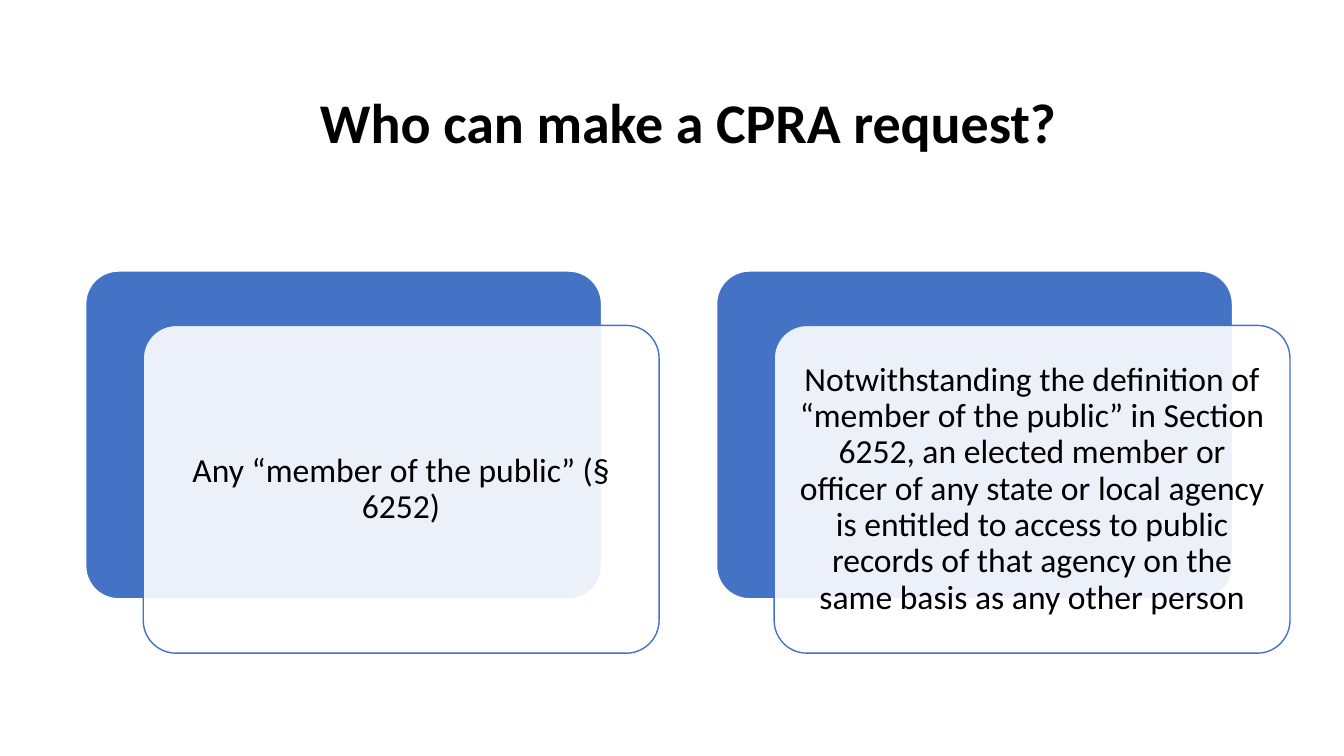
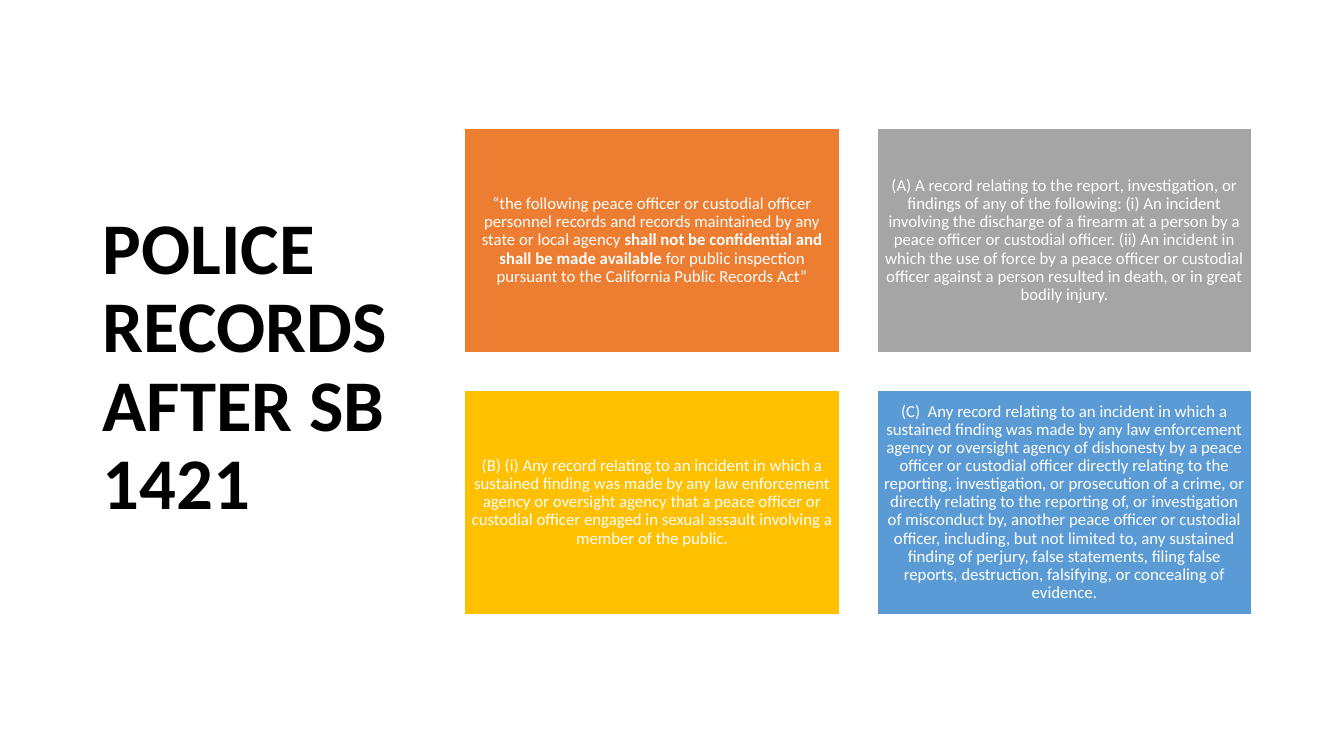
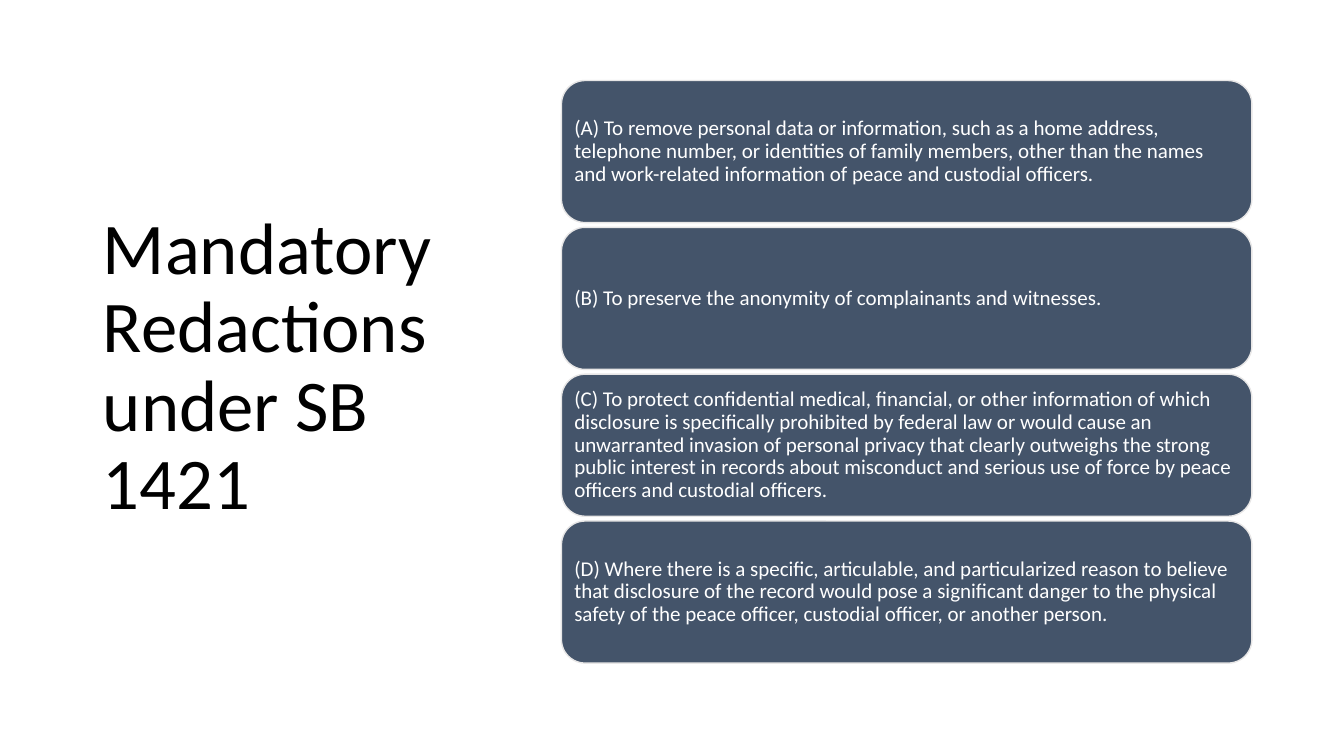
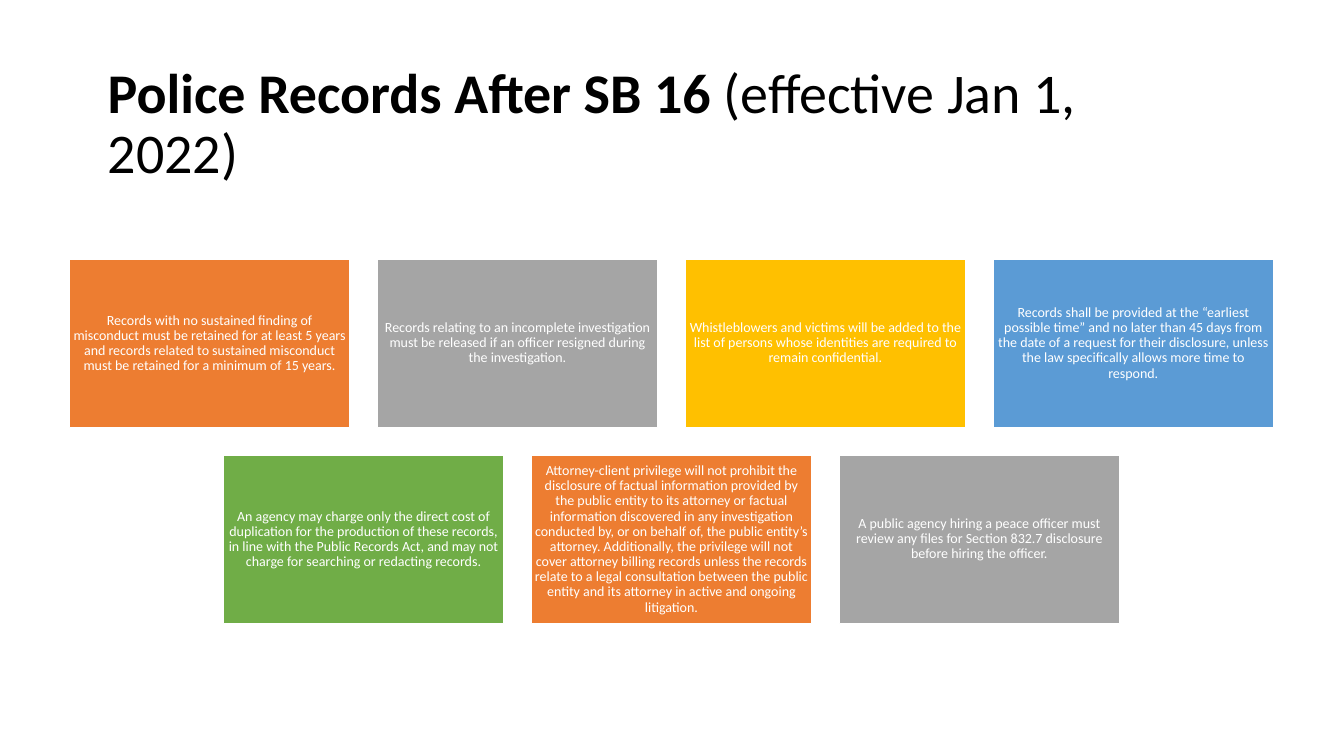
from dataclasses import dataclass

import lxml.etree
import pptx
import pptx.dml.color
import pptx.enum.shapes
import pptx.enum.text
import pptx.oxml.ns
import pptx.presentation
import pptx.shapes.autoshape
import pptx.slide
import pptx.text.text
import pptx.util

Cm = pptx.util.Cm
Align = pptx.enum.text.PP_ALIGN
Preset = pptx.enum.shapes.MSO_SHAPE

FONT = "Calibri"
LINE_SPACING = 0.9
TITLE_ONLY_LAYOUT = 5
COLORS = {
    "black": "000000",
    "white": "FFFFFF",
    "blue": "4472C4",
    "orange": "ED7D31",
    "gray": "A5A5A5",
    "gold": "FFC000",
    "sky": "5B9BD5",
    "green": "70AD47",
    "slate": "44546A",
    "silver": "E7E6E6",
}


@dataclass(frozen=True)
class Span:
    text: str
    bold: bool = False


@dataclass(frozen=True)
class Box:
    left: float
    top: float
    width: float
    height: float


@dataclass(frozen=True)
class TextStyle:
    size: int
    color: str = "white"
    align: Align = Align.CENTER


@dataclass(frozen=True)
class Card:
    fill: str
    spans: tuple[Span, ...] = ()


@dataclass(frozen=True)
class CardGrid:
    first: Box
    columns: int
    gap: float
    style: TextStyle
    margin: float
    line: str = "white"
    preset: Preset = Preset.RECTANGLE
    corner: float | None = None
    opacity: int = 100


WIDE_TITLE = Box(2.46, 0.97, 28.37, 4.37)
CENTERED_TITLE = Box(3.84, 0.97, 27, 4.37)
SIDE_TITLE = Box(2.34, 1.55, 9.37, 15.47)

REQUESTERS = (
    "Any “member of the public” (§ 6252)",
    "Notwithstanding the definition of “member of the public” in Section 6252, an elected member or officer of any state or local agency is entitled to access to public records of that agency on the same basis as any other person",
)

RECORD_CARDS = (
    Card("orange", (
        Span("“the following peace officer or custodial officer personnel records and records maintained by any state or local agency "),
        Span("shall not be confidential and shall be made available ", True),
        Span("for public inspection pursuant to the California Public Records Act”"),
    )),
    Card("gray", (Span("(A) A record relating to the report, investigation, or findings of any of the following: (i) An incident involving the discharge of a firearm at a person by a peace officer or custodial officer. (ii) An incident in which the use of force by a peace officer or custodial officer against a person resulted in death, or in great bodily injury."),)),
    Card("gold", (Span("(B) (i) Any record relating to an incident in which a sustained finding was made by any law enforcement agency or oversight agency that a peace officer or custodial officer engaged in sexual assault involving a member of the public."),)),
    Card("sky", (Span("(C)  Any record relating to an incident in which a sustained finding was made by any law enforcement agency or oversight agency of dishonesty by a peace officer or custodial officer directly relating to the reporting, investigation, or prosecution of a crime, or directly relating to the reporting of, or investigation of misconduct by, another peace officer or custodial officer, including, but not limited to, any sustained finding of perjury, false statements, filing false reports, destruction, falsifying, or concealing of evidence."),)),
)

REDACTIONS = (
    "(A) To remove personal data or information, such as a home address, telephone number, or identities of family members, other than the names and work-related information of peace and custodial officers.",
    "(B) To preserve the anonymity of complainants and witnesses.",
    "(C) To protect confidential medical, financial, or other information of which disclosure is specifically prohibited by federal law or would cause an unwarranted invasion of personal privacy that clearly outweighs the strong public interest in records about misconduct and serious use of force by peace officers and custodial officers.",
    "(D) Where there is a specific, articulable, and particularized reason to believe that disclosure of the record would pose a significant danger to the physical safety of the peace officer, custodial officer, or another person.",
)

NEW_RULES = (
    ("orange", "Records with no sustained finding of misconduct must be retained for at least 5 years and records related to sustained misconduct must be retained for a minimum of 15 years."),
    ("gray", "Records relating to an incomplete investigation must be released if an officer resigned during the investigation."),
    ("gold", "Whistleblowers and victims will be added to the list of persons whose identities are required to remain confidential."),
    ("sky", "Records shall be provided at the “earliest possible time” and no later than 45 days from the date of a request for their disclosure, unless the law specifically allows more time to respond."),
    ("green", "An agency may charge only the direct cost of duplication for the production of these records, in line with the Public Records Act, and may not charge for searching or redacting records."),
    ("orange", "Attorney-client privilege will not prohibit the disclosure of factual information provided by the public entity to its attorney or factual information discovered in any investigation conducted by, or on behalf of, the public entity’s attorney. Additionally, the privilege will not cover attorney billing records unless the records relate to a legal consultation between the public entity and its attorney in active and ongoing litigation."),
    ("gray", "A public agency hiring a peace officer must review any files for Section 832.7 disclosure before hiring the officer."),
)


def rgb(name: str) -> pptx.dml.color.RGBColor:
    return pptx.dml.color.RGBColor.from_string(COLORS[name])


def write_text(frame: pptx.text.text.TextFrame, spans: tuple[Span, ...], style: TextStyle) -> None:
    frame.word_wrap = True
    frame.auto_size = pptx.enum.text.MSO_AUTO_SIZE.NONE
    frame.vertical_anchor = pptx.enum.text.MSO_ANCHOR.MIDDLE
    paragraph = frame.paragraphs[0]
    paragraph.alignment = style.align
    paragraph.line_spacing = LINE_SPACING
    for span in spans:
        run = paragraph.add_run()
        run.text = span.text
        run.font.name = FONT
        run.font.size = pptx.util.Pt(style.size)
        run.font.bold = span.bold
        run.font.color.rgb = rgb(style.color)


def add_titled_slide(
    presentation: pptx.presentation.Presentation,
    box: Box,
    spans: tuple[Span, ...],
    size: int,
    align: Align = Align.LEFT,
) -> pptx.slide.Slide:
    slide = presentation.slides.add_slide(presentation.slide_layouts[TITLE_ONLY_LAYOUT])
    title = slide.shapes.title
    title.left, title.top = Cm(box.left), Cm(box.top)
    title.width, title.height = Cm(box.width), Cm(box.height)
    write_text(title.text_frame, spans, TextStyle(size, "black", align))
    return slide


def set_opacity(shape: pptx.shapes.autoshape.Shape, percent: int) -> None:
    color = shape.fill._xPr.find(".//" + pptx.oxml.ns.qn("a:srgbClr"))
    alpha = lxml.etree.SubElement(color, pptx.oxml.ns.qn("a:alpha"))
    alpha.set("val", str(percent * 1000))


def add_card(slide: pptx.slide.Slide, grid: CardGrid, card: Card, left: float, top: float) -> None:
    shape = slide.shapes.add_shape(
        grid.preset, Cm(left), Cm(top), Cm(grid.first.width), Cm(grid.first.height)
    )
    shape.shadow.inherit = False
    shape.fill.solid()
    shape.fill.fore_color.rgb = rgb(card.fill)
    shape.line.color.rgb = rgb(grid.line)
    shape.line.width = pptx.util.Pt(1)
    if grid.corner is not None:
        shape.adjustments[0] = grid.corner
    if grid.opacity < 100:
        set_opacity(shape, grid.opacity)
    frame = shape.text_frame
    frame.margin_left = frame.margin_right = Cm(grid.margin)
    frame.margin_top = frame.margin_bottom = Cm(grid.margin)
    write_text(frame, card.spans, grid.style)


def add_cards(slide: pptx.slide.Slide, grid: CardGrid, cards: tuple[Card, ...]) -> None:
    step_x = grid.first.width + grid.gap
    step_y = grid.first.height + grid.gap
    for index, card in enumerate(cards):
        row, column = divmod(index, grid.columns)
        row_count = min(grid.columns, len(cards) - row * grid.columns)
        indent = (grid.columns - row_count) * step_x / 2
        add_card(
            slide, grid, card,
            grid.first.left + indent + column * step_x,
            grid.first.top + row * step_y,
        )


def build_requesters(presentation: pptx.presentation.Presentation) -> None:
    slide = add_titled_slide(
        presentation, CENTERED_TITLE, (Span("Who can make a CPRA request?", True),), 40, Align.CENTER
    )
    style = TextStyle(24, "black")
    back = CardGrid(
        Box(2.16, 6.83, 13, 8.26), 2, 2.9, style, 0.25, preset=Preset.ROUNDED_RECTANGLE, corner=0.1
    )
    front = CardGrid(
        Box(3.61, 8.2, 13, 8.26), 2, 2.9, style, 0.25, "blue", Preset.ROUNDED_RECTANGLE, 0.1, 90
    )
    add_cards(slide, back, (Card("blue"),) * len(REQUESTERS))
    add_cards(slide, front, tuple(Card("white", (Span(text),)) for text in REQUESTERS))


def build_records(presentation: pptx.presentation.Presentation) -> None:
    slide = add_titled_slide(
        presentation, SIDE_TITLE, (Span("POLICE RECORDS AFTER SB 1421", True),), 52
    )
    grid = CardGrid(Box(11.71, 3.23, 9.45, 5.66), 2, 0.94, TextStyle(12), 0.13)
    add_cards(slide, grid, RECORD_CARDS)


def build_redactions(presentation: pptx.presentation.Presentation) -> None:
    slide = add_titled_slide(
        presentation, SIDE_TITLE, (Span("Mandatory Redactions under SB 1421"),), 52
    )
    grid = CardGrid(
        Box(14.15, 2.03, 17.4, 3.58), 1, 0.12, TextStyle(15, align=Align.LEFT), 0.15,
        "silver", Preset.ROUNDED_RECTANGLE,
    )
    add_cards(slide, grid, tuple(Card("slate", (Span(text),)) for text in REDACTIONS))


def build_new_rules(presentation: pptx.presentation.Presentation) -> None:
    slide = add_titled_slide(
        presentation,
        WIDE_TITLE,
        (Span("Police Records After SB 16 ", True), Span("(effective Jan 1, 2022)")),
        40,
    )
    grid = CardGrid(Box(1.75, 6.53, 7.06, 4.24), 4, 0.7, TextStyle(10), 0.09)
    add_cards(slide, grid, tuple(Card(fill, (Span(text),)) for fill, text in NEW_RULES))


def main() -> None:
    presentation = pptx.Presentation()
    presentation.slide_width = Cm(33.87)
    presentation.slide_height = Cm(19.05)
    build_requesters(presentation)
    build_records(presentation)
    build_redactions(presentation)
    build_new_rules(presentation)
    presentation.save("out.pptx")


if __name__ == "__main__":
    main()
